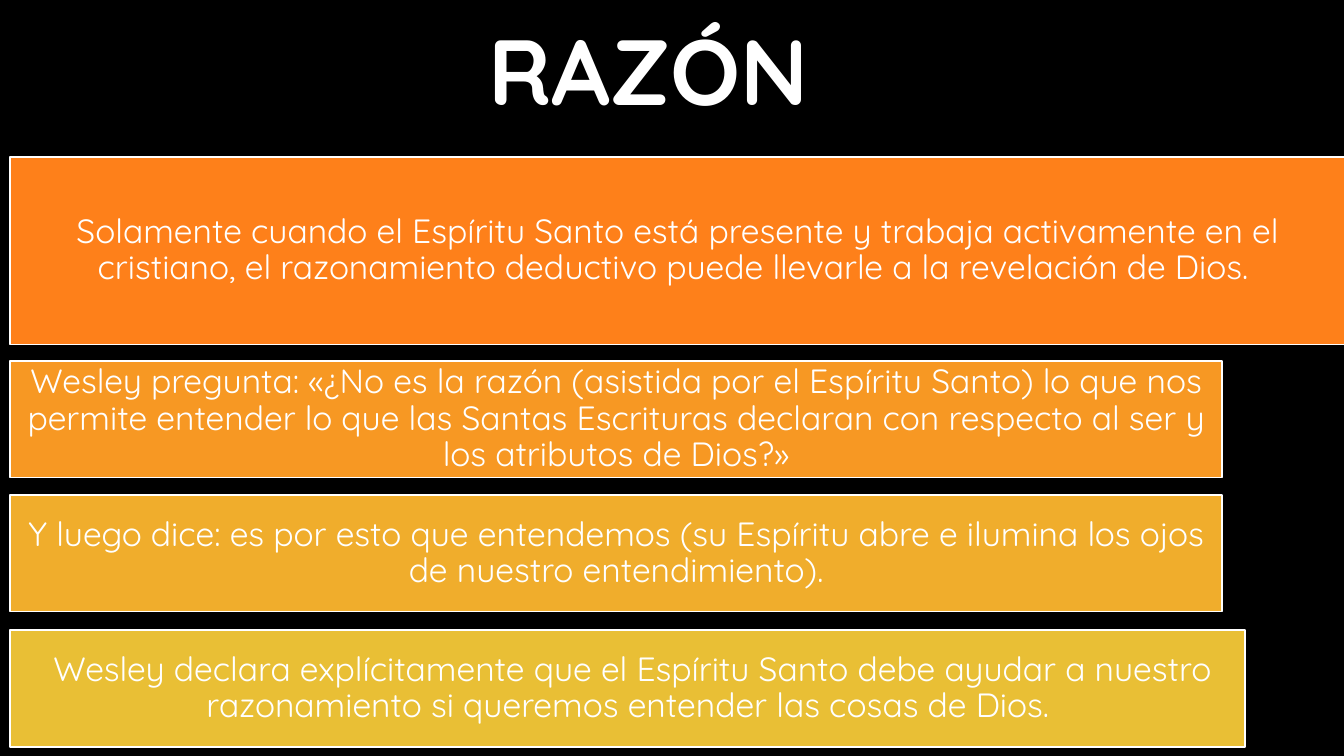
from dataclasses import dataclass

from pptx import Presentation
from pptx.dml.color import RGBColor
from pptx.enum.shapes import MSO_SHAPE
from pptx.enum.text import MSO_ANCHOR, PP_ALIGN
from pptx.util import Inches, Pt

RECTANGLE = MSO_SHAPE.RECTANGLE
MIDDLE = MSO_ANCHOR.MIDDLE
CENTER = PP_ALIGN.CENTER


@dataclass(frozen=True)
class Theme:
    font: str = "Quicksand"
    background: RGBColor = RGBColor(0x00, 0x00, 0x00)
    text: RGBColor = RGBColor(0xFF, 0xFF, 0xFF)
    title_size: int = 66
    body_size: int = 24
    bar_fills: tuple = ("FE801A", "F79823", "F0AD2C", "E9BF35")


THEME = Theme()
BAR_LEFT = 0.1
BAR_INSET = 0.1

# top, width, height in inches, then the wording
BARS = [
    (1.56, 13.24, 1.86,
     "Solamente cuando el Espíritu Santo está presente y trabaja activamente "
     "en el cristiano, el razonamiento deductivo puede llevarle a la "
     "revelación de Dios. "),
    (3.58, 12.02, 1.16,
     "Wesley pregunta: «¿No es la razón (asistida por el Espíritu Santo) lo "
     "que nos permite entender lo que las Santas Escrituras declaran con "
     "respecto al ser y los atributos de Dios?»"),
    (4.91, 12.02, 1.16,
     "Y luego dice: es por esto que entendemos (su Espíritu abre e ilumina "
     "los ojos de nuestro entendimiento)."),
    (6.25, 12.25, 1.16,
     " Wesley declara explícitamente que el Espíritu Santo debe ayudar a "
     "nuestro razonamiento si queremos entender las cosas de Dios."),
]


def write_text(shape, text, size, bold=False):
    frame = shape.text_frame
    frame.word_wrap = True
    frame.vertical_anchor = MIDDLE
    paragraph = frame.paragraphs[0]
    paragraph.text = text
    paragraph.alignment = CENTER
    paragraph.line_spacing = 0.9
    font = paragraph.font
    font.name = THEME.font
    font.size = Pt(size)
    font.bold = bold
    font.color.rgb = THEME.text


def add_title(slide, text):
    title = slide.shapes.add_textbox(
        Inches(1.42), Inches(0.09), Inches(10.28), Inches(1.31))
    write_text(title, text, THEME.title_size, bold=True)


def add_bar(slide, top, width, height, text, fill):
    bar = slide.shapes.add_shape(
        RECTANGLE, Inches(BAR_LEFT), Inches(top), Inches(width), Inches(height))
    bar.shadow.inherit = False
    bar.fill.solid()
    bar.fill.fore_color.rgb = RGBColor.from_string(fill)
    bar.line.color.rgb = THEME.text
    bar.line.width = Pt(1)
    frame = bar.text_frame
    frame.margin_left = frame.margin_right = Inches(BAR_INSET)
    frame.margin_top = frame.margin_bottom = Inches(BAR_INSET)
    write_text(bar, text, THEME.body_size)


def main():
    presentation = Presentation()
    presentation.slide_width = Inches(13.33)
    presentation.slide_height = Inches(7.5)
    slide = presentation.slides.add_slide(presentation.slide_layouts[6])
    background = slide.background.fill
    background.solid()
    background.fore_color.rgb = THEME.background

    add_title(slide, "RAZÓN ")
    for (top, width, height, text), fill in zip(BARS, THEME.bar_fills):
        add_bar(slide, top, width, height, text, fill)
    presentation.save("out.pptx")


if __name__ == "__main__":
    main()
